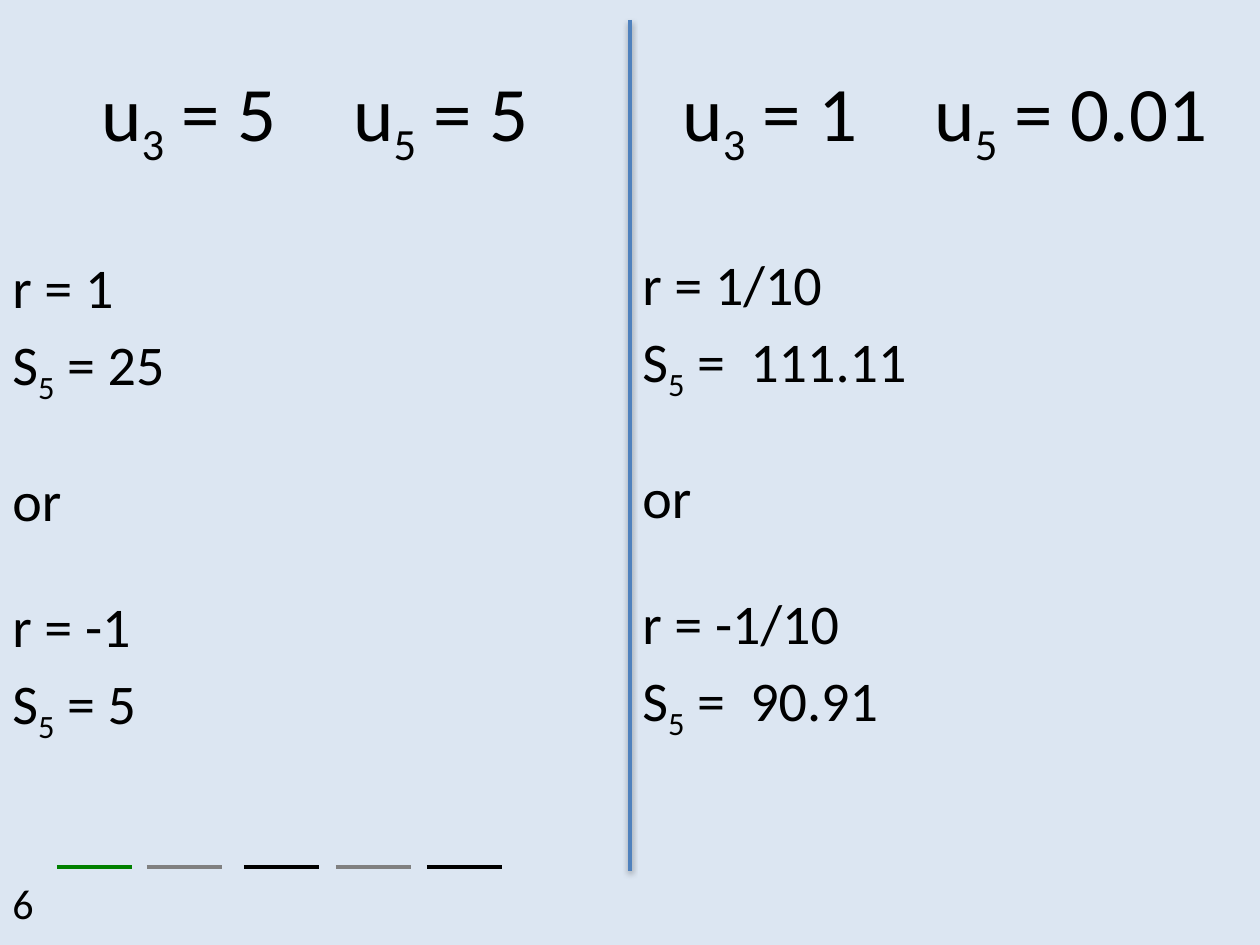
from pptx import Presentation
from pptx.dml.color import RGBColor
from pptx.enum.shapes import MSO_CONNECTOR
from pptx.enum.text import MSO_ANCHOR, PP_ALIGN
from pptx.oxml import parse_xml
from pptx.oxml.ns import nsdecls
from pptx.util import Pt

SCALE = 914400 / 126
WIDTH, HEIGHT = 1260, 945
HALF = WIDTH // 2

PALE = RGBColor(0xDC, 0xE6, 0xF2)
BLUE = RGBColor(0x4F, 0x81, 0xBD)
GREEN = RGBColor(0x00, 0x80, 0x00)
GRAY = RGBColor(0x80, 0x80, 0x80)
BLACK = RGBColor(0x00, 0x00, 0x00)

# "_" puts the next character below the line.
HALVES = [
    {"title": "u_3 = 5\t\tu_5 = 5", "top": 246,
     "lines": ["r = 1", "S_5 = 25", "or", "r = -1", "S_5 = 5"]},
    {"title": "u_3 = 1\t\tu_5 = 0.01", "top": 243,
     "lines": ["r = 1/10", "S_5 =  111.11", "or", "r = -1/10", "S_5 =  90.91"]},
]
GAPS = [0, 5.5, 34, 34, 5.5]
NUMBER = "6"
DASHES = [(57, GREEN), (147, GRAY), (244, BLACK), (336, GRAY), (427, BLACK)]
DASH_Y, DASH_W = 867, 75

SHADOW = ('<a:outerShdw blurRad="39370" dist="20320" dir="5400000" rotWithShape="0">'
          '<a:srgbClr val="000000"><a:alpha val="38000"/></a:srgbClr></a:outerShdw>')


def px(n):
    return round(n * SCALE)


def add_run(para, text, size, sub=False):
    run = para.add_run()
    run.text = text
    for name, value in {"size": Pt(size), "name": "Calibri"}.items():
        setattr(run.font, name, value)
    run.font.color.rgb = BLACK
    if sub:
        run.font._element.set("baseline", "-25000")


def add_text(slide, box, lines, size, gaps=(0,), align=PP_ALIGN.LEFT,
             anchor=MSO_ANCHOR.TOP):
    frame = slide.shapes.add_textbox(*map(px, box)).text_frame
    frame.word_wrap = True
    frame.vertical_anchor = anchor
    for i, (line, gap) in enumerate(zip(lines, gaps)):
        para = frame.add_paragraph() if i else frame.paragraphs[0]
        para.alignment = align
        para.space_before = Pt(gap)
        first, *rest = line.split("_")
        add_run(para, first, size)
        for part in rest:
            add_run(para, part[0], size, sub=True)
            if part[1:]:
                add_run(para, part[1:], size)


def add_line(slide, ends, color, effect=""):
    line = slide.shapes.add_connector(MSO_CONNECTOR.STRAIGHT, *map(px, ends))
    line.line.color.rgb = color
    line.line.width = Pt(2)
    line._element.spPr.append(
        parse_xml(f'<a:effectLst {nsdecls("a")}>{effect}</a:effectLst>'))


def main():
    deck = Presentation()
    deck.slide_width, deck.slide_height = px(WIDTH), px(HEIGHT)
    slide = deck.slides.add_slide(deck.slide_layouts[6])
    fill = slide.background.fill
    fill.solid()
    fill.fore_color.rgb = PALE

    for i, half in enumerate(HALVES):
        left = i * HALF
        add_text(slide, (left, 38, HALF, 158), [half["title"]], 44,
                 align=PP_ALIGN.CENTER, anchor=MSO_ANCHOR.MIDDLE)
        add_text(slide, (left, half["top"], HALF, 624), half["lines"], 32, GAPS)

    add_line(slide, (HALF, 20, HALF, 871), BLUE, SHADOW)
    add_text(slide, (0, 871, 131, 63), [NUMBER], 24)
    for left, color in DASHES:
        add_line(slide, (left, DASH_Y, left + DASH_W, DASH_Y), color)

    deck.save("out.pptx")


if __name__ == "__main__":
    main()
